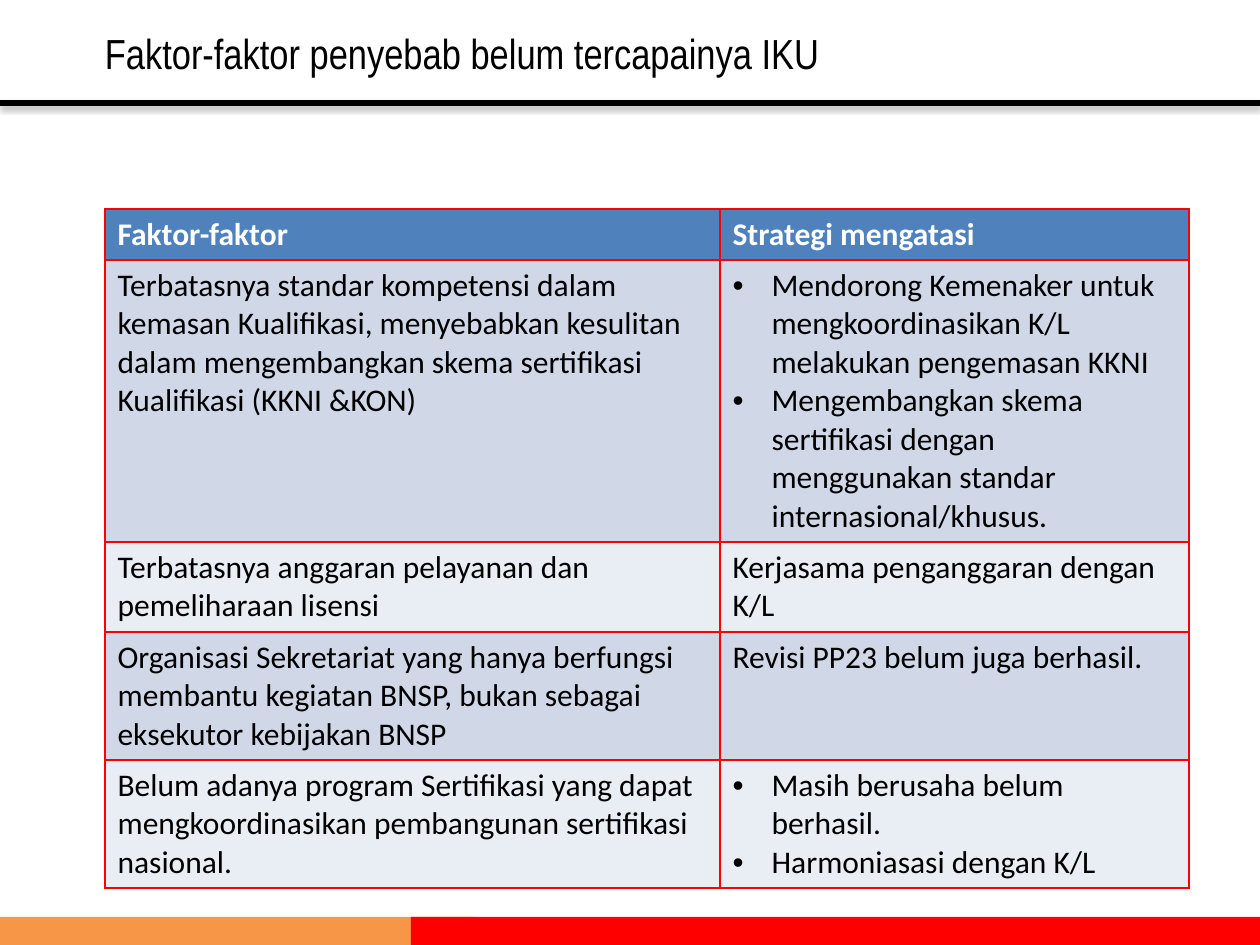
"""Build the slide on factors behind unmet IKU targets and the strategies for them."""
from dataclasses import dataclass

from lxml.etree import SubElement
from pptx import Presentation
from pptx.dml.color import RGBColor
from pptx.enum.shapes import MSO_SHAPE as Shape
from pptx.enum.text import MSO_ANCHOR as Anchor, PP_ALIGN as Align
from pptx.oxml import parse_xml
from pptx.oxml.ns import qn
from pptx.util import Pt

TITLE = "Faktor-faktor penyebab belum tercapainya IKU"
HEADER = ("Faktor-faktor", "Strategi mengatasi")
ROWS = [
    ("Terbatasnya standar kompetensi dalam kemasan Kualifikasi, menyebabkan kesulitan "
     "dalam mengembangkan skema sertifikasi Kualifikasi (KKNI &KON)",
     ["Mendorong Kemenaker untuk mengkoordinasikan K/L melakukan pengemasan KKNI",
      "Mengembangkan skema sertifikasi dengan menggunakan standar internasional/khusus."]),
    ("Terbatasnya anggaran pelayanan dan pemeliharaan lisensi",
     "Kerjasama penganggaran dengan K/L"),
    ("Organisasi Sekretariat yang hanya berfungsi membantu kegiatan BNSP, "
     "bukan sebagai eksekutor kebijakan BNSP",
     "Revisi PP23 belum juga berhasil."),
    ("Belum adanya program Sertifikasi yang dapat mengkoordinasikan pembangunan "
     "sertifikasi nasional.",
     ["Masih berusaha belum berhasil.", "Harmoniasasi dengan K/L"]),
]


@dataclass(frozen=True)
class Theme:
    black: str = "000000"
    white: str = "FFFFFF"
    red: str = "FF0000"
    orange: str = "F79646"
    header: str = "4F81BD"
    bands: tuple = ("D0D8E8", "E9EDF4")
    title_font: str = "Arial Narrow"
    body_font: str = "Calibri"
    title_size: int = 24
    body_size: int = 18


THEME = Theme()
PX = 914400 // 126
SLIDE = (1260, 945)
TITLE_BOX = (53, 0, 818, 105)
RULE_BOX = (0, 100, 1260, 6)
FOOTER = [((0, 917, 475, 28), THEME.orange), ((411, 917, 849, 28), THEME.red)]
TABLE_AT = (105, 209)
COLUMNS = (615, 469)
HEIGHTS = (51, 281, 90, 128, 128)
INDENT = 39
DRAWING = "http://schemas.openxmlformats.org/drawingml/2006/main"
SHADOW = (f'<a:effectLst xmlns:a="{DRAWING}"><a:outerShdw blurRad="39370" dist="22860" '
          f'dir="5400000" rotWithShape="0"><a:srgbClr val="{THEME.black}">'
          '<a:alpha val="35000"/></a:srgbClr></a:outerShdw></a:effectLst>')


def emu(lengths):
    return [length * PX for length in lengths]


def style(font, name, size, color, bold=False):
    font.name, font.size, font.bold = name, Pt(size), bold
    font.color.rgb = RGBColor.from_string(color)


def add_bar(page, box, color):
    bar = page.shapes.add_shape(Shape.RECTANGLE, *emu(box))
    bar.shadow.inherit = False
    bar.fill.solid()
    bar.fill.fore_color.rgb = RGBColor.from_string(color)
    bar.line.fill.background()
    return bar


def add_rule(page):
    properties = add_bar(page, RULE_BOX, THEME.black).element.spPr
    properties.replace(properties.find(qn("a:effectLst")), parse_xml(SHADOW))


def add_title(page):
    title = page.shapes.title
    title.left, title.top, title.width, title.height = emu(TITLE_BOX)
    frame = title.text_frame
    frame.text = TITLE
    frame.word_wrap = True
    frame.vertical_anchor = Anchor.MIDDLE
    para = frame.paragraphs[0]
    para.alignment = Align.CENTER
    style(para.runs[0].font, THEME.title_font, THEME.title_size, THEME.black)


def add_bullet(para):
    properties = para._p.get_or_add_pPr()
    properties.set("marL", str(INDENT * PX))
    properties.set("indent", str(-INDENT * PX))
    SubElement(properties, qn("a:buFont"), typeface="Arial")
    SubElement(properties, qn("a:buChar"), char="•")


def add_borders(cell):
    properties = cell._tc.get_or_add_tcPr()
    for position, side in enumerate(("lnL", "lnR", "lnT", "lnB")):
        border = parse_xml(
            f'<a:{side} xmlns:a="{DRAWING}" w="{Pt(1)}"><a:solidFill>'
            f'<a:srgbClr val="{THEME.red}"/></a:solidFill></a:{side}>')
        properties.insert(position, border)


def fill_cell(cell, content, fill, color, bold):
    bulleted = isinstance(content, list)
    cell.text_frame.text = "\n".join(content) if bulleted else content
    for para in cell.text_frame.paragraphs:
        if bulleted:
            add_bullet(para)
        for span in para.runs:
            style(span.font, THEME.body_font, THEME.body_size, color, bold)
    cell.fill.solid()
    cell.fill.fore_color.rgb = RGBColor.from_string(fill)
    add_borders(cell)


def add_factors(page):
    size = (sum(COLUMNS), sum(HEIGHTS))
    table = page.shapes.add_table(
        len(HEIGHTS), len(COLUMNS), *emu(TABLE_AT + size)).table
    for column, width in zip(table.columns, emu(COLUMNS)):
        column.width = width
    for row, height in zip(table.rows, emu(HEIGHTS)):
        row.height = height
    for index, contents in enumerate([HEADER, *ROWS]):
        heading = index == 0
        fill = THEME.header if heading else THEME.bands[(index - 1) % 2]
        color = THEME.white if heading else THEME.black
        for cell, content in zip(table.rows[index].cells, contents):
            fill_cell(cell, content, fill, color, heading)


def main():
    deck = Presentation()
    deck.slide_width, deck.slide_height = emu(SLIDE)
    page = deck.slides.add_slide(deck.slide_layouts[5])
    for box, color in FOOTER:
        add_bar(page, box, color)
    add_rule(page)
    add_title(page)
    add_factors(page)
    deck.save("out.pptx")


if __name__ == "__main__":
    main()
